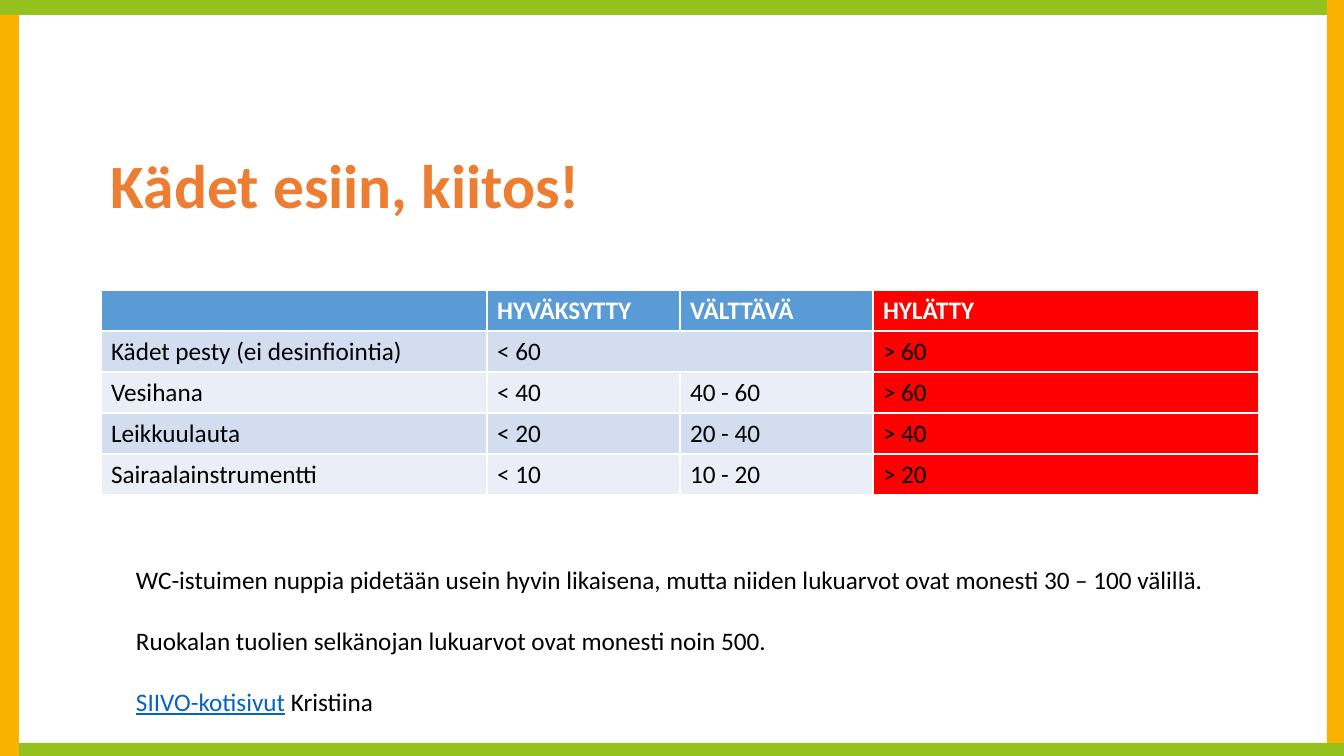
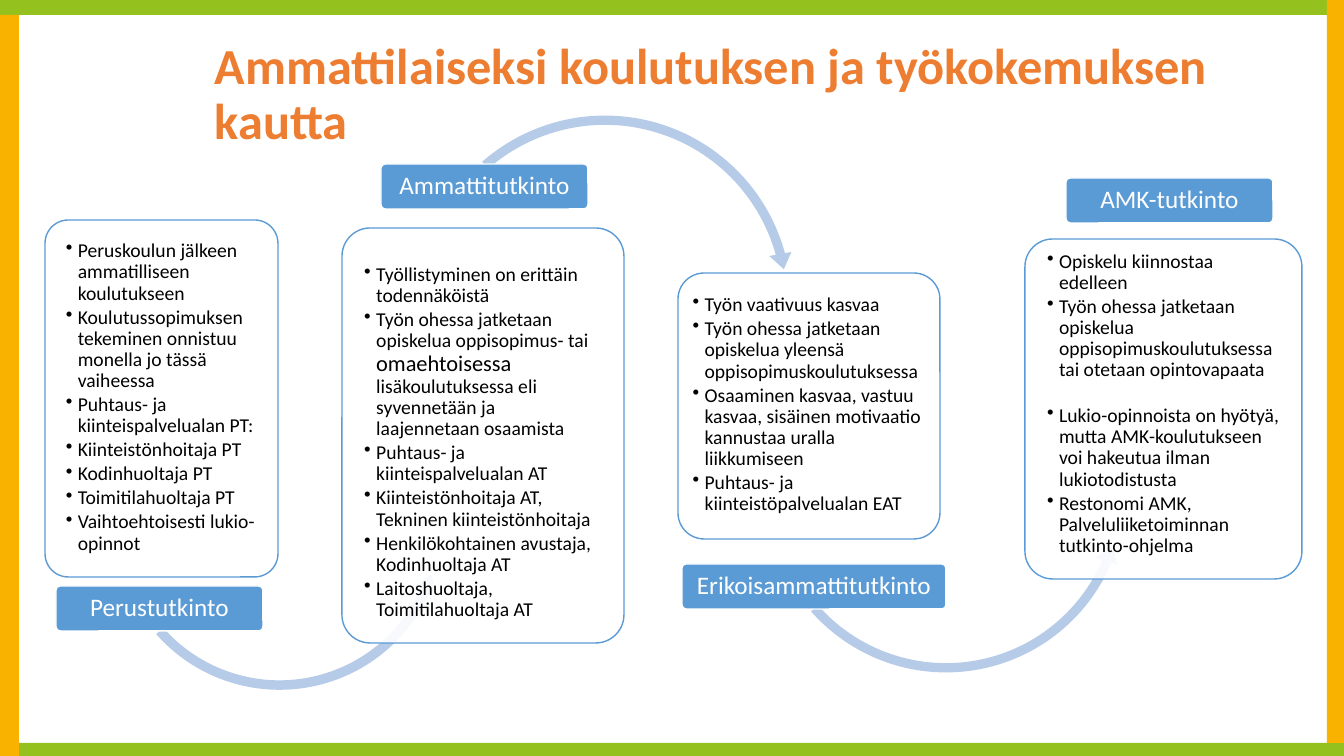
from lxml.etree import SubElement as Sub
from pptx import Presentation as Deck
from pptx.dml.color import RGBColor as Rgb
from pptx.enum.shapes import MSO_SHAPE as Kind
from pptx.enum.text import MSO_ANCHOR as Anchor, PP_ALIGN as Align
from pptx.oxml.ns import qn
from pptx.util import Pt

WIDE, HIGH = 1344, 756
SCALE = 12192000 / WIDE
FONT = "Calibri"
GREEN, AMBER, ORANGE = "94C11E", "F9B200", "ED7D31"
BLUE, PALE, RED = "5B9BD5", "B5CBE7", "FF0000"
WHITE, BLACK, LINK = "FFFFFF", "000000", "0563C1"
STRIPES = "D2DEEF", "EAEFF7"
BANDS = [
    ((0, 0, WIDE, 15), GREEN),
    ((0, 743, WIDE, 13), GREEN),
    ((0, 15, 19, 741), AMBER),
    ((1327, 0, 17, 743), AMBER),
]

GRID = [
    ["", "HYVÄKSYTTY", "VÄLTTÄVÄ", "HYLÄTTY"],
    ["Kädet pesty (ei desinfiointia)", "< 60", "", "> 60"],
    ["Vesihana", "< 40", "40 - 60", "> 60"],
    ["Leikkuulauta", "< 20", "20 - 40", "> 40"],
    ["Sairaalainstrumentti", "< 10", "10 - 20", "> 20"],
]
NOTES = [
    "WC-istuimen nuppia pidetään usein hyvin likaisena, mutta niiden lukuarvot ovat monesti 30 – 100 välillä.",
    "Ruokalan tuolien selkänojan lukuarvot ovat monesti noin 500.",
    [("SIIVO-kotisivut", {"color": LINK, "under": True}), (" Kristiina", {})],
]

STEPS = [
    {
        "label": "Perustutkinto", "tag": (56, 586, 207, 45),
        "box": (45, 220, 233, 357),
        "lines": [
            "Peruskoulun jälkeen ammatilliseen koulutukseen",
            "Koulutussopimuksen tekeminen onnistuu monella jo tässä vaiheessa",
            "Puhtaus- ja kiinteispalvelualan PT:",
            "Kiinteistönhoitaja PT",
            "Kodinhuoltaja PT",
            "Toimitilahuoltaja PT",
            "Vaihtoehtoisesti lukio-opinnot",
        ],
        "arc": (Kind.LEFT_CIRCULAR_ARROW, (109, 355, 341, 341),
                (2.8, 338.8, 1406.1, 8316.3, 3.2)),
    },
    {
        "label": "Ammattitutkinto", "tag": (381, 164, 207, 45),
        "box": (342, 228, 282, 415), "anchor": Anchor.BOTTOM,
        "lines": [
            "Työllistyminen on erittäin todennäköistä",
            [
                ("Työn ohessa jatketaan opiskelua oppisopimus- tai ", {}),
                ("omaehtoisessa", {"size": 16}),
                (" lisäkoulutuksessa eli syvennetään ja laajennetaan osaamista", {}),
            ],
            "Puhtaus- ja kiinteispalvelualan AT",
            "Kiinteistönhoitaja AT, Tekninen kiinteistönhoitaja",
            "Henkilökohtainen avustaja, Kodinhuoltaja AT",
            "Laitoshuoltaja, Toimitilahuoltaja AT",
        ],
        "arc": (Kind.CIRCULAR_ARROW, (412, 109, 386, 386),
                (2.4, 296.4, 20681.1, 13728.6, 2.9)),
    },
    {
        "label": "Erikoisammattitutkinto", "tag": (682, 564, 264, 45),
        "box": (678, 273, 262, 266), "sides": (7, 9),
        "lines": [
            "Työn vaativuus kasvaa",
            "Työn ohessa jatketaan opiskelua yleensä oppisopimuskoulutuksessa",
            "Osaaminen kasvaa, vastuu kasvaa, sisäinen motivaatio kannustaa uralla liikkumiseen",
            "Puhtaus- ja kiinteistöpalvelualan EAT",
        ],
        "arc": (Kind.LEFT_CIRCULAR_ARROW, (760, 307, 372, 372),
                (2.5, 308.6, 1380.8, 8321.1, 3)),
    },
    {
        "label": "AMK-tutkinto", "tag": (1066, 178, 207, 45),
        "box": (1025, 239, 277, 340), "anchor": Anchor.BOTTOM, "gap": 1,
        "lines": [
            "Opiskelu kiinnostaa edelleen",
            "Työn ohessa jatketaan opiskelua oppisopimuskoulutuksessa tai otetaan opintovapaata",
            "Lukio-opinnoista on hyötyä, mutta AMK-koulutukseen voi hakeutua ilman lukiotodistusta",
            "Restonomi AMK, Palveluliiketoiminnan tutkinto-ohjelma",
        ],
    },
]


def px(num):
    """Turn px into EMU."""
    return round(num * SCALE)


def hue(code):
    """Turn a hex string into a colour."""
    return Rgb.from_string(code)


def put(frame, lines, size=18, color=BLACK, bold=False, align=Align.LEFT,
        anchor=Anchor.TOP, pads=(10, 5, 10, 5), pitch=1.0, before=0, after=0,
        dot=False):
    """Write lines of text, plain or in runs, into a text frame."""
    frame.word_wrap = True
    frame.vertical_anchor = anchor
    (frame.margin_left, frame.margin_top,
     frame.margin_right, frame.margin_bottom) = map(px, pads)
    for num, line in enumerate(lines):
        para = frame.add_paragraph() if num else frame.paragraphs[0]
        if dot:
            props = para._p.get_or_add_pPr()
            props.set("marL", str(px(12)))
            props.set("indent", str(px(-12)))
            Sub(props, qn("a:buChar")).set("char", "•")
        para.alignment = align
        para.line_spacing = pitch
        para.space_before = Pt(before if num else 0)
        para.space_after = Pt(after)
        for text, look in [(line, {})] if isinstance(line, str) else line:
            run = para.add_run()
            run.text = text
            font = run.font
            font.name, font.bold = FONT, bold
            font.size = Pt(look.get("size", size))
            font.underline = look.get("under", False)
            font.color.rgb = hue(look.get("color", color))


def note(slide, box, lines, **look):
    """Add a text box."""
    put(slide.shapes.add_textbox(*map(px, box)).text_frame, lines, **look)


def form(slide, kind, box, fill, line=None, clear=None):
    """Add a preset shape with a flat fill."""
    shape = slide.shapes.add_shape(kind, *map(px, box))
    shape.shadow.inherit = False
    shape.fill.solid()
    shape.fill.fore_color.rgb = hue(fill)
    if clear:
        tint = shape.fill._xPr.find(".//" + qn("a:srgbClr"))
        Sub(tint, qn("a:alpha")).set("val", str(clear * 1000))
    if line:
        shape.line.color.rgb = hue(line)
        shape.line.width = Pt(1)
    else:
        shape.line.fill.background()
    return shape


def card(slide, box, fill, line, lines, clear=None, **look):
    """Add a rounded box that holds text."""
    shape = form(slide, Kind.ROUNDED_RECTANGLE, box, fill, line, clear)
    shape.adjustments[0] = 0.1
    put(shape.text_frame, lines, pitch=0.9, **look)
    return shape.text_frame


def base(deck, title, box, size):
    """Add a slide with its edge bands and title."""
    slide = deck.slides.add_slide(deck.slide_layouts[6])
    for band, fill in BANDS:
        form(slide, Kind.RECTANGLE, band, fill)
    note(slide, box, [title], size=size, color=ORANGE, bold=True,
         anchor=Anchor.MIDDLE, pitch=0.9)
    return slide


def chart(slide, left, top, wide):
    """Add the table of limits, in columns of one and two sixths."""
    tall = 41
    table = slide.shapes.add_table(
        len(GRID), 4, *map(px, (left, top, wide, tall * len(GRID)))).table
    for col, part in zip(table.columns, (2, 1, 1, 2)):
        col.width = px(wide * part // 6)
    for i, row in enumerate(GRID):
        table.rows[i].height = px(tall)
        for j, text in enumerate(row):
            cell = table.cell(i, j)
            cell.fill.solid()
            shade = STRIPES[(i - 1) % 2] if i else BLUE
            cell.fill.fore_color.rgb = hue(RED if j == 3 else shade)
            if text:
                put(cell.text_frame, [text], bold=not i,
                    color=BLACK if i else WHITE)
    table.cell(1, 1).merge(table.cell(1, 2))


def step(slide, label, tag, box, lines, anchor=Anchor.TOP, sides=(14, 14),
         gap=None, arc=None):
    """Add one stage: its panel, the arrow onward and its label."""
    left, right = sides
    frame = card(slide, box, WHITE, BLUE, lines, clear=90, size=14, after=2,
                 anchor=anchor, pads=(left, 14, right, 14), dot=True)
    if gap is not None:
        frame.paragraphs[gap].space_after = Pt(17.5)
    if arc:
        kind, area, bends = arc
        arrow = form(slide, kind, area, PALE)
        for num, bend in enumerate(bends):
            arrow.adjustments[num] = bend / 100
    card(slide, tag, BLUE, WHITE, [label], color=WHITE, align=Align.CENTER,
         anchor=Anchor.MIDDLE, pads=(4, 3, 4, 3))


def limits(deck):
    """Build the slide with the table of limits."""
    slide = base(deck, "Kädet esiin, kiitos!", (101, 130, 1159, 117), 44)
    chart(slide, 101, 290, 1158)
    note(slide, (126, 559, 1093, 163), NOTES, before=22)


def career(deck):
    """Build the slide with the stages of a career."""
    slide = base(deck, "Ammattilaiseksi koulutuksen ja työkokemuksen kautta",
                 (205, 48, 1041, 95), 36)
    for stage in STEPS:
        step(slide, **stage)


def main():
    """Build and save the deck."""
    deck = Deck()
    deck.slide_width, deck.slide_height = px(WIDE), px(HIGH)
    limits(deck)
    career(deck)
    deck.save("out.pptx")


if __name__ == "__main__":
    main()
